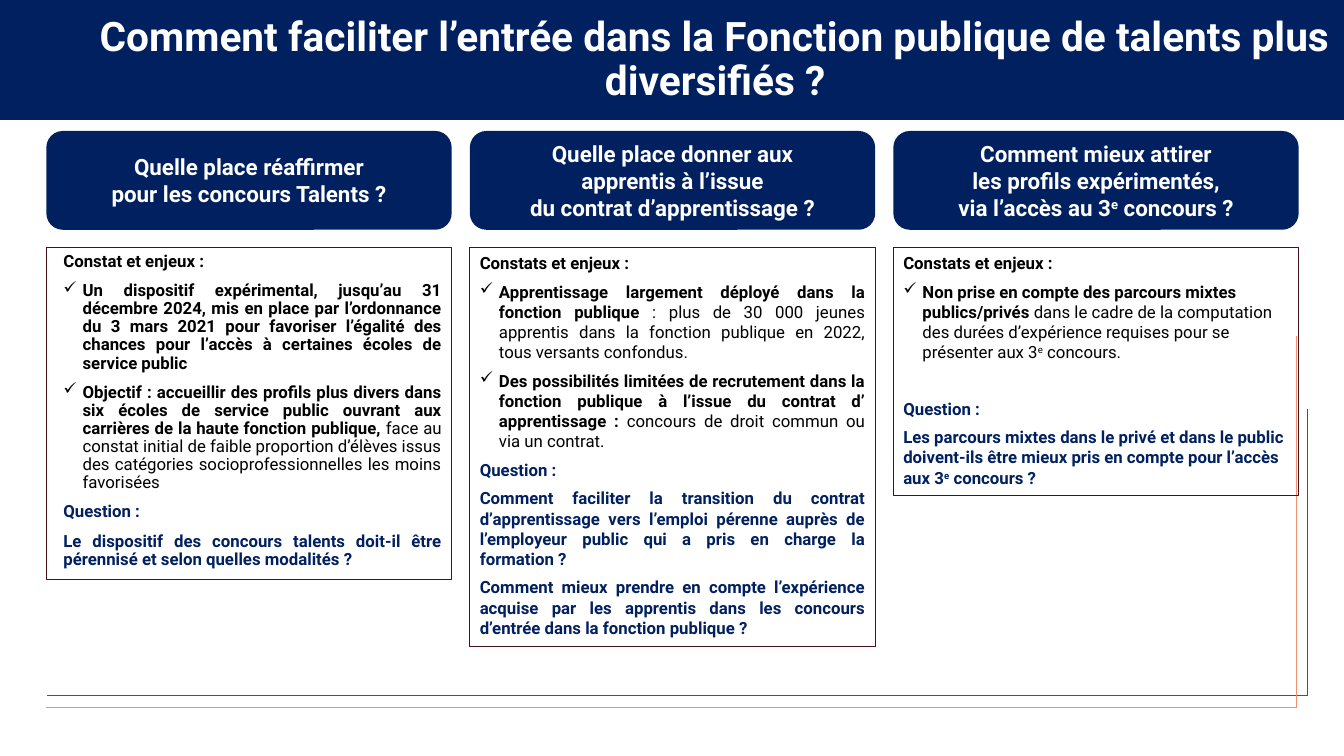
from dataclasses import dataclass
from pptx import Presentation
from pptx.dml.color import RGBColor
from pptx.enum.shapes import MSO_CONNECTOR, MSO_SHAPE
from pptx.enum.text import MSO_ANCHOR, MSO_AUTO_SIZE, PP_ALIGN
from pptx.oxml.ns import qn
from pptx.util import Inches, Pt
from lxml.etree import SubElement


@dataclass(frozen=True)
class Theme:
    font: str = "Roboto"
    navy: str = "002060"
    white: str = "FFFFFF"
    black: str = "000000"
    wine: str = "46111C"
    slate: str = "484D7A"
    coral: str = "F48F70"
    title: int = 29
    head: int = 16
    body: int = 12


# Places are percentages of the slide's width and height
LEFT, STEP, WIDE = 3.45, 31.51, 30.16
HANG = 1.43


def write(para, text, size, color, bold=True, sup=False, font=Theme.font):
    run = para.add_run()
    run.text = text
    run.font.name = font
    run.font.size = Pt(size)
    run.font.bold = bold
    run.font.color.rgb = RGBColor.from_string(color)
    if sup:
        run._r.get_or_add_rPr().set("baseline", "30000")


class Page:
    def __init__(self, deck, theme):
        self.theme = theme
        self.wide, self.high = deck.slide_width, deck.slide_height
        self.slide = deck.slides.add_slide(deck.slide_layouts[6])

    def x(self, share):
        return round(self.wide * share / 100)

    def y(self, share):
        return round(self.high * share / 100)

    def line(self, x1, y1, x2, y2, color):
        rule = self.slide.shapes.add_connector(
            MSO_CONNECTOR.STRAIGHT, self.x(x1), self.y(y1), self.x(x2), self.y(y2))
        rule.line.color.rgb = RGBColor.from_string(color)
        rule.line.width = Pt(1)
        SubElement(rule._element.spPr, qn("a:effectLst"))

    def box(self, kind, x, y, w, h, fill=None, edge=None):
        shape = self.slide.shapes.add_shape(
            kind, self.x(x), self.y(y), self.x(w), self.y(h))
        shape.shadow.inherit = False
        if fill:
            shape.fill.solid()
            shape.fill.fore_color.rgb = RGBColor.from_string(fill)
        else:
            shape.fill.background()
        if edge:
            shape.line.color.rgb = RGBColor.from_string(edge)
            shape.line.width = Pt(0.75)
        else:
            shape.line.fill.background()
        frame = shape.text_frame
        frame.word_wrap = True
        frame.vertical_anchor = MSO_ANCHOR.MIDDLE
        return frame

    def para(self, frame, first, parts, size, color, align=PP_ALIGN.CENTER,
             before=0, after=0, pitch=1.0, inset=0, tick=False):
        para = frame.paragraphs[0] if first else frame.add_paragraph()
        para.alignment = align
        para.line_spacing = pitch
        para.space_before = Pt(0 if first else before)
        para.space_after = Pt(after)
        props = para._p.get_or_add_pPr()
        props.set("marL", str(self.x(inset + (HANG if tick else 0))))
        props.set("indent", str(-self.x(HANG) if tick else 0))
        if tick:
            SubElement(props, qn("a:buChar")).set("char", "✓")
        for text, style in parts:
            write(para, text, size, color, **style)

    def title(self, text):
        frame = self.box(MSO_SHAPE.RECTANGLE, 0, 0, 100, 15.87, self.theme.navy)
        frame.margin_left = self.x(7.05)
        frame.margin_right = self.x(0.6)
        self.para(frame, True, [(text, {})], self.theme.title,
                  self.theme.white, pitch=0.9)

    def head(self, col, lines):
        frame = self.box(MSO_SHAPE.ROUNDED_RECTANGLE, LEFT + col * STEP, 17.33,
                         WIDE, 13.07, self.theme.navy)
        for row, parts in enumerate(lines):
            self.para(frame, row == 0, parts, self.theme.head, self.theme.white)

    def card(self, col, high, items, gap=6, **style):
        frame = self.box(MSO_SHAPE.RECTANGLE, LEFT + col * STEP, 32.8,
                         WIDE, high, edge=self.theme.wine)
        frame.vertical_anchor = MSO_ANCHOR.TOP
        frame.auto_size = MSO_AUTO_SIZE.SHAPE_TO_FIT_TEXT
        asked = False
        for row, (kind, parts) in enumerate(items):
            opens = kind == "ask" and not asked
            asked = asked or opens
            self.para(frame, row == 0, parts, self.theme.body,
                      self.theme.navy if kind == "ask" else self.theme.black,
                      before=gap if opens else 6, tick=kind == "tick", **style)


BOLD, THIN, SUP = {}, {"bold": False}, {"sup": True}

HEADS = [
    [[("Quelle place réaffirmer", BOLD)],
     [("pour les concours Talents ?", BOLD)]],
    [[("Quelle place donner aux", BOLD)],
     [("apprentis à l’issue", BOLD)],
     [("du contrat d’apprentissage ?", BOLD)]],
    [[("Comment mieux attirer", BOLD)],
     [("les profils expérimentés,", BOLD)],
     [("via l’accès au 3", BOLD), ("e", SUP), (" concours ?", BOLD)]],
]

TALENTS = [
    ("note", [("Constat et enjeux :", BOLD)]),
    ("tick", [("Un dispositif expérimental, jusqu’au 31 décembre 2024, mis en place "
               "par l’ordonnance du 3 mars 2021 pour favoriser l’égalité des chances "
               "pour l’accès à certaines écoles de service public", BOLD)]),
    ("tick", [("Objectif : accueillir des profils plus divers dans six écoles de "
               "service public ouvrant aux carrières de la haute fonction publique, ",
               BOLD),
              ("face au constat initial de faible proportion d’élèves issus des "
               "catégories socioprofessionnelles les moins favorisées", THIN)]),
    ("ask", [("Question :", BOLD)]),
    ("ask", [("Le dispositif des concours talents doit-il être pérennisé et selon "
              "quelles modalités ?", BOLD)]),
]

TRAINEES = [
    ("note", [("Constats et enjeux :", BOLD)]),
    ("tick", [("Apprentissage largement déployé dans la fonction publique ", BOLD),
              (": plus de 30 000 jeunes apprentis dans la fonction publique en 2022, "
               "tous versants confondus.", THIN)]),
    ("tick", [("Des possibilités limitées de recrutement dans la fonction publique à "
               "l’issue du contrat d’ apprentissage : ", BOLD),
              ("concours de droit commun ou via un contrat.", THIN)]),
    ("ask", [("Question :", BOLD)]),
    ("ask", [("Comment faciliter la transition du contrat d’apprentissage vers "
              "l’emploi pérenne auprès de l’employeur public qui a pris en charge la "
              "formation ?", BOLD)]),
    ("ask", [("Comment mieux prendre en compte l’expérience acquise par les apprentis "
              "dans les concours d’entrée dans la fonction publique ?", BOLD)]),
]

SKILLED = [
    ("note", [("Constats et enjeux :", BOLD)]),
    ("tick", [("Non prise en compte des parcours mixtes publics/privés", BOLD),
              (" dans le cadre de la computation des durées d’expérience requises "
               "pour se présenter aux 3", THIN),
              ("e", {**THIN, **SUP}), (" concours.", THIN)]),
    ("ask", [("Question :", BOLD)]),
    ("ask", [("Les parcours mixtes dans le privé et dans le public doivent-ils être "
              "mieux pris en compte pour l’accès aux 3", BOLD),
             ("e", SUP), (" concours ?", BOLD)]),
]


def main():
    deck = Presentation()
    deck.slide_width, deck.slide_height = Inches(13.33), Inches(7.5)
    theme = Theme()
    page = Page(deck, theme)

    # Corner rules
    for left, right, top, base, color in [
            (3.53, 97.3, 54.13, 92, theme.slate),
            (LEFT, 96.47, 44.4, 93.6, theme.coral)]:
        page.line(left, base, right, base, color)
        page.line(right, base, right, top, color)

    # Title band and column heads
    page.title("Comment faciliter l’entrée dans la Fonction publique "
               "de talents plus diversifiés ?")
    for col, lines in enumerate(HEADS):
        page.head(col, lines)

    # Findings and questions
    page.card(0, 43.87, TALENTS, align=PP_ALIGN.JUSTIFY,
              after=1.8, pitch=0.9, inset=0.53)
    page.card(1, 52.67, TRAINEES, align=PP_ALIGN.JUSTIFY)
    page.card(2, 32.8, SKILLED, gap=26, align=PP_ALIGN.LEFT)

    deck.save("out.pptx")


if __name__ == "__main__":
    main()
